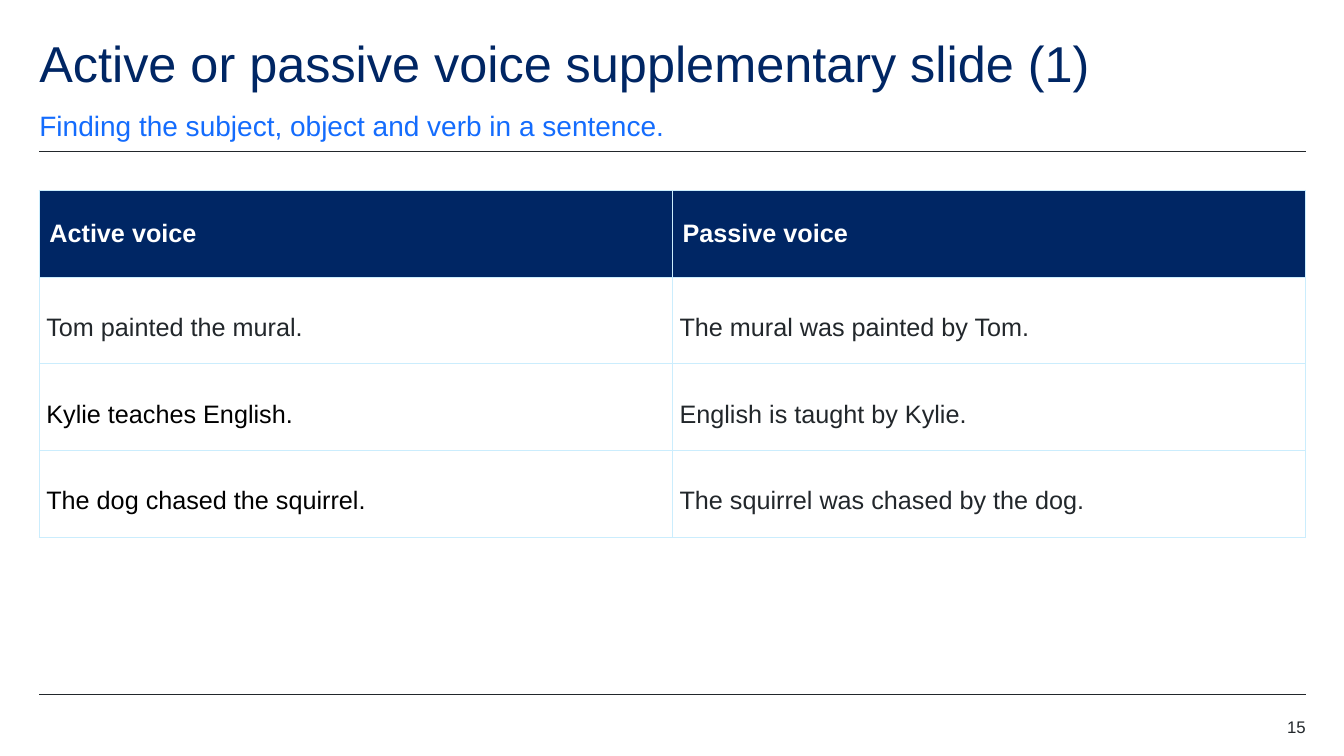
from lxml import etree
from pptx import Presentation
from pptx.dml.color import RGBColor
from pptx.enum import text
from pptx.oxml import ns
from pptx.util import Inches, Pt

NAVY = RGBColor(0x00, 0x26, 0x64)
BLUE = RGBColor(0x14, 0x6C, 0xFD)
PALE = RGBColor(0xCB, 0xED, 0xFD)
INK = RGBColor(0x22, 0x27, 0x2B)
BLACK = RGBColor(0, 0, 0)
WHITE = RGBColor(0xFF, 0xFF, 0xFF)

LEFT, RIGHT = 0.39, 12.95
ROW_HEIGHT = 0.86
HEADERS = ["Active voice", "Passive voice"]
SENTENCES = [
    [("Tom painted the mural.", INK), ("The mural was painted by Tom.", INK)],
    [("Kylie teaches English.", BLACK), ("English is taught by Kylie.", INK)],
    [("The dog chased the squirrel.", BLACK),
     ("The squirrel was chased by the dog.", INK)],
]


def set_text(tf, content, size, color, spacing=None, bold=False):
    p = tf.paragraphs[0]
    p.text = content
    p.line_spacing = spacing
    font = p.runs[0].font
    font.name = "Arial"
    font.size = Pt(size)
    font.bold = bold
    font.color.rgb = color
    return p


def add_text(s, box, content, size, color, spacing,
             anchor=text.MSO_ANCHOR.TOP, align=text.PP_ALIGN.LEFT):
    tf = s.shapes.add_textbox(*map(Inches, box)).text_frame
    tf.word_wrap = True
    tf.margin_left = tf.margin_right = tf.margin_top = tf.margin_bottom = 0
    tf.vertical_anchor = anchor
    set_text(tf, content, size, color, spacing).alignment = align


def add_rule(s, y):
    line = s.shapes.add_connector(1, Inches(LEFT), Inches(y),
                                  Inches(RIGHT), Inches(y))
    line.line.color.rgb = INK
    line.line.width = Pt(0.5)
    etree.SubElement(line._element.spPr, ns.qn("a:effectLst"))


def set_borders(cell):
    tcPr = cell._tc.get_or_add_tcPr()
    for i, side in enumerate(("lnL", "lnR", "lnT", "lnB")):
        ln = etree.Element(ns.qn(f"a:{side}"), w=str(Pt(1)))
        fill = etree.SubElement(ln, ns.qn("a:solidFill"))
        etree.SubElement(fill, ns.qn("a:srgbClr"), val=str(PALE))
        tcPr.insert(i, ln)


def add_voice_table(s):
    rows, cols = len(SENTENCES) + 1, len(HEADERS)
    table = s.shapes.add_table(
        rows, cols, Inches(LEFT), Inches(1.89),
        Inches(RIGHT - LEFT), Inches(rows * ROW_HEIGHT)).table
    table.horz_banding = False
    for row in table.rows:
        row.height = Inches(ROW_HEIGHT)
    for cell in table.iter_cells():
        cell.vertical_anchor = text.MSO_ANCHOR.MIDDLE
        set_borders(cell)
    for c, header in enumerate(HEADERS):
        cell = table.cell(0, c)
        cell.fill.solid()
        cell.fill.fore_color.rgb = NAVY
        set_text(cell.text_frame, header, 18, WHITE, bold=True)
    for r, pair in enumerate(SENTENCES, 1):
        for c, (sentence, color) in enumerate(pair):
            cell = table.cell(r, c)
            cell.fill.background()
            cell.margin_left = cell.margin_right = Inches(0.07)
            cell.margin_top = cell.margin_bottom = 0
            set_text(cell.text_frame, sentence, 18, color, 1.5)


def main():
    prs = Presentation()
    prs.slide_width, prs.slide_height = Inches(13.33), Inches(7.5)
    s = prs.slides.add_slide(prs.slide_layouts[6])
    for y in (1.5, 6.89):
        add_rule(s, y)
    add_text(s, (LEFT, 0.39, 11.02, 0.6),
             "Active or passive voice supplementary slide (1)", 36, NAVY, 0.9)
    add_text(s, (LEFT, 1.07, 11.02, 0.34),
             "Finding the subject, object and verb in a sentence.",
             20, BLUE, 1.4, anchor=text.MSO_ANCHOR.BOTTOM)
    add_voice_table(s)
    add_text(s, (12.16, 7.13, 0.79, 0.2), "15", 12, INK, 0.9,
             align=text.PP_ALIGN.RIGHT)
    prs.save("out.pptx")


if __name__ == "__main__":
    main()
